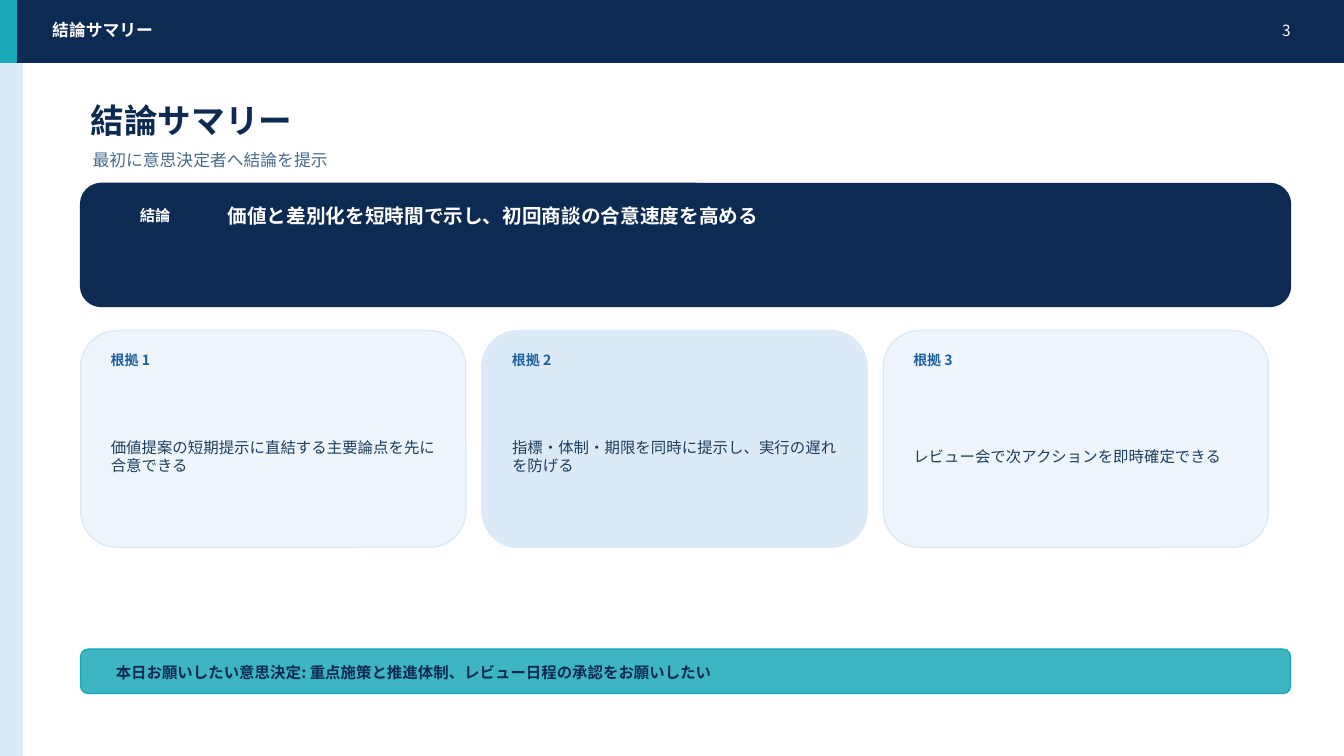
from lxml.etree import SubElement
from pptx import Presentation
from pptx.dml.color import RGBColor
from pptx.enum.shapes import MSO_SHAPE as Shape
from pptx.enum.text import MSO_ANCHOR as Anchor, MSO_AUTO_SIZE as AutoSize, PP_ALIGN as Align
from pptx.oxml.ns import qn
from pptx.util import Inches, Pt

FONT = "Noto Sans CJK JP"
NAVY = RGBColor(0x0D, 0x2A, 0x52)
TEAL = RGBColor(0x1A, 0xA8, 0xB8)
PALE = RGBColor(0xDC, 0xEA, 0xF7)
ICE = RGBColor(0xEE, 0xF5, 0xFC)
WHITE = RGBColor(0xFF, 0xFF, 0xFF)
BLUE = RGBColor(0x1D, 0x5F, 0x9F)
SLATE = RGBColor(0x47, 0x6B, 0x8C)
INK = RGBColor(0x1C, 0x3E, 0x5E)

deck = Presentation()
deck.slide_width, deck.slide_height = Inches(13.33), Inches(7.5)
page = deck.slides.add_slide(deck.slide_layouts[5])


def add_panel(kind, left, top, width, height, fill, line):
    panel = page.shapes.add_shape(kind, *map(Inches, (left, top, width, height)))
    panel.shadow.inherit = False
    panel.fill.solid()
    panel.fill.fore_color.rgb = fill
    panel.line.color.rgb = line
    panel.line.width = Pt(1)
    return panel


def add_text(text, left, top, width, height, size, color, bold=False, align=Align.LEFT, box=None):
    """Write one formatted line in a new text box, or in the given placeholder."""
    box = box or page.shapes.add_textbox(0, 0, 0, 0)
    for name, value in {"left": left, "top": top, "width": width, "height": height}.items():
        setattr(box, name, Inches(value))
    frame = box.text_frame
    frame.word_wrap = True
    frame.auto_size = AutoSize.NONE
    frame.vertical_anchor = Anchor.MIDDLE
    para = frame.paragraphs[0]
    para.alignment = align
    span = para.add_run()
    span.text = text
    for name, value in {"size": Pt(size), "bold": bold, "name": FONT}.items():
        setattr(span.font, name, value)
    span.font.color.rgb = color
    SubElement(span.font._element, qn("a:ea"), typeface=FONT)


# Side strip and header
add_panel(Shape.RECTANGLE, 0, 0.55, 0.22, 6.95, PALE, PALE)
add_panel(Shape.RECTANGLE, 0, 0, 13.33, 0.62, NAVY, NAVY)
add_panel(Shape.RECTANGLE, 0, 0, 0.16, 0.62, TEAL, TEAL)
add_text("結論サマリー", 0.42, 0.17, 8.8, 0.26, 12, WHITE, bold=True)
add_text("3", 12.15, 0.17, 0.75, 0.26, 11, WHITE, align=Align.RIGHT)

# Title and subtitle
add_text("結論サマリー", 0.8, 0.95, 11.4, 0.48, 24, NAVY, bold=True, box=page.shapes.title)
add_text("最初に意思決定者へ結論を提示", 0.82, 1.44, 11.2, 0.3, 12, SLATE)

# Conclusion
add_panel(Shape.ROUNDED_RECTANGLE, 0.8, 1.82, 12, 1.22, NAVY, NAVY)
add_text("結論", 1.04, 2.02, 1, 0.24, 11, WHITE, bold=True, align=Align.CENTER)
add_text("価値と差別化を短時間で示し、初回商談の合意速度を高める",
         2.16, 1.98, 10.4, 0.32, 14, WHITE, bold=True)

# Reasons
CARD_WIDTH, CARD_GAP = 3.82, 0.16
reasons = [
    ("価値提案の短期提示に直結する主要論点を先に合意できる", ICE),
    ("指標・体制・期限を同時に提示し、実行の遅れを防げる", PALE),
    ("レビュー会で次アクションを即時確定できる", ICE),
]
for index, (reason, fill) in enumerate(reasons):
    left = 0.8 + index * (CARD_WIDTH + CARD_GAP)
    add_panel(Shape.ROUNDED_RECTANGLE, left, 3.28, CARD_WIDTH, 2.15, fill, PALE)
    add_text(f"根拠 {index + 1}", left + 0.2, 3.46, 0.9, 0.22, 10, BLUE, bold=True)
    add_text(reason, left + 0.2, 3.78, CARD_WIDTH - 0.4, 1.5, 11, INK)

# Requested decision
request = add_panel(Shape.ROUNDED_RECTANGLE, 0.8, 6.44, 12, 0.44, TEAL, TEAL)
fill_color = request.fill._xPr.find(qn("a:solidFill"))[0]
SubElement(fill_color, qn("a:alpha"), val="84000")
add_text("本日お願いしたい意思決定: 重点施策と推進体制、レビュー日程の承認をお願いしたい",
         1.05, 6.56, 11.5, 0.22, 11, NAVY, bold=True)

deck.save("out.pptx")
